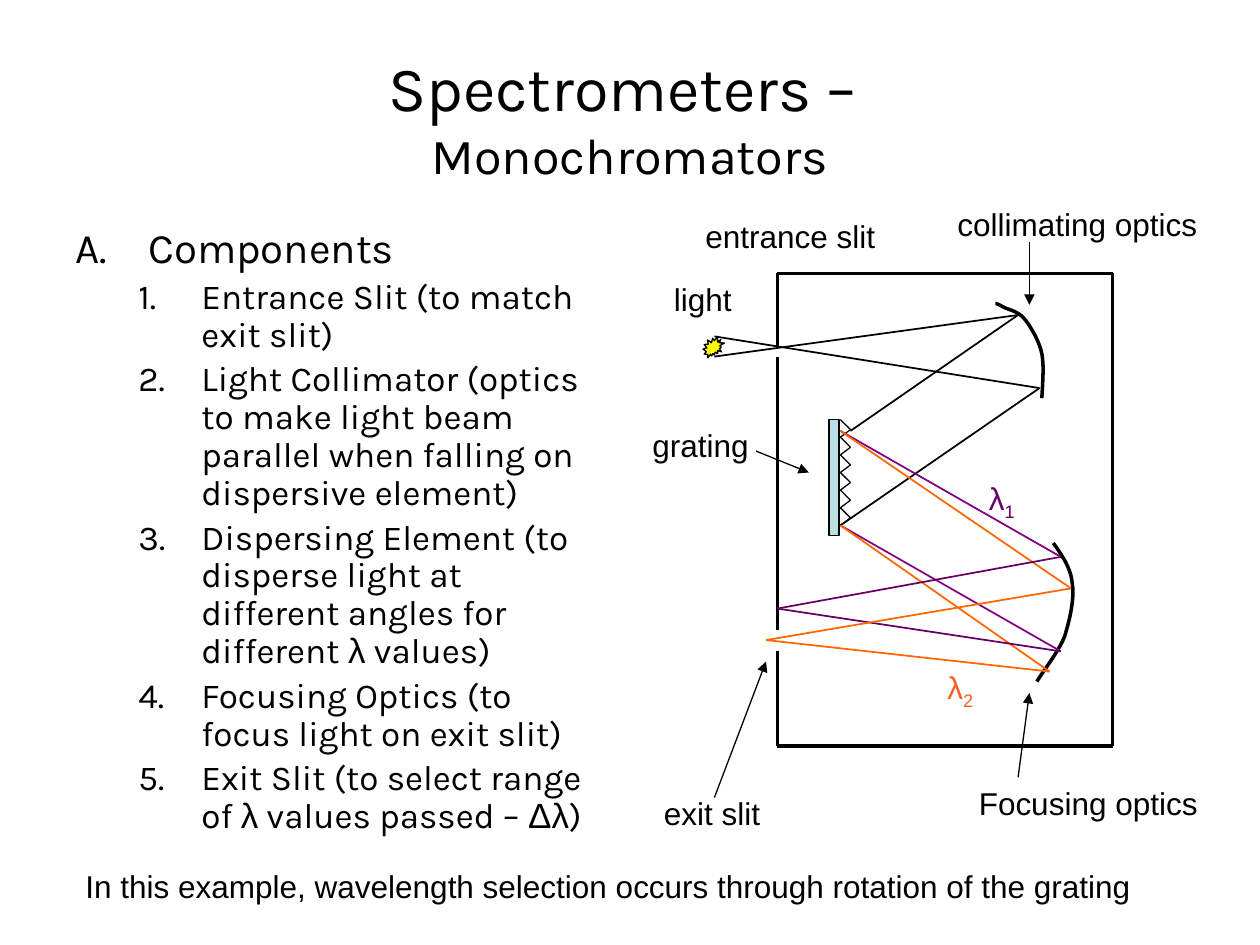
from itertools import groupby, pairwise

from pptx import Presentation
from pptx.dml.color import RGBColor
from pptx.enum.shapes import MSO_CONNECTOR, MSO_SHAPE
from pptx.enum.text import MSO_ANCHOR, PP_ALIGN
from pptx.oxml.ns import qn
from pptx.util import Inches, Pt

BLACK = "000000"
PURPLE = "800080"
DARK_PURPLE = "660066"
ORANGE = "FF6600"

COMPONENTS = [
    "Entrance Slit (to match exit slit)",
    "Light Collimator (optics to make light beam parallel when falling on dispersive element)",
    "Dispersing Element (to disperse light at different angles for different λ values)",
    "Focusing Optics (to focus light on exit slit)",
    "Exit Slit (to select range of λ values passed – Δλ)",
]

LABELS = [
    ("entrance slit", 5.5, 1.67, 1.58),
    ("light", 5.25, 2.17, 0.83),
    ("grating", 5.08, 3.33, 1.08),
    ("collimating optics", 7.5, 1.58, 2.25),
    ("Focusing optics", 7.67, 6.17, 2.08),
    ("exit slit", 5.17, 6.25, 1.42),
    ("In this example, wavelength selection occurs through rotation of the grating",
     0.58, 6.83, 8.92),
]

HOUSING = [
    [(6.17, 2.75), (6.17, 2.17), (8.83, 2.17), (8.83, 5.92), (6.17, 5.92), (6.17, 5.17)],
    [(6.17, 5), (6.17, 2.83)],
]

RAYS = [
    (BLACK, [(5.67, 2.67), (8.25, 3.08), (6.67, 4.17)]),
    (BLACK, [(5.67, 2.83), (8.08, 2.5), (6.75, 3.42)]),
    (PURPLE, [(6.67, 3.42), (8.42, 4.42)]),
    (PURPLE, [(6.67, 4.17), (8.42, 5.17)]),
    (ORANGE, [(6.67, 3.42), (8.5, 4.67)]),
    (ORANGE, [(6.67, 4.17), (8.33, 5.33)]),
    (DARK_PURPLE, [(8.42, 4.42), (6.17, 4.83), (8.42, 5.17)]),
    (ORANGE, [(8.5, 4.67), (6.08, 5.08), (8.33, 5.33)]),
]

POINTERS = [
    [(6, 3.58), (6.42, 3.75)],
    [(8.17, 1.92), (8.17, 2.42)],
    [(8.08, 6.17), (8.17, 5.5)],
    [(5.67, 6.33), (6.08, 5.25)],
]

COLLIMATING_MIRROR = [
    (7.9, 2.41), (7.92, 2.41), (7.93, 2.42), (7.97, 2.44), (8.01, 2.46),
    (8.08, 2.47), (8.13, 2.53), (8.18, 2.59), (8.25, 2.71), (8.27, 2.81),
    (8.29, 2.92), (8.27, 3.1), (8.27, 3.16),
]
FOCUSING_MIRROR = [
    (8.36, 4.31), (8.43, 4.41), (8.5, 4.51), (8.51, 4.63), (8.53, 4.75),
    (8.49, 4.92), (8.45, 5.05), (8.4, 5.18), (8.26, 5.35), (8.23, 5.41),
]


def rgb(color):
    return RGBColor.from_string(color)


def style_run(r, size, font="Arial", color=BLACK):
    r.font.size = Pt(size)
    r.font.name = font
    r.font.color.rgb = rgb(color)


def add_text(s, x, y, w, h):
    tf = s.shapes.add_textbox(Inches(x), Inches(y), Inches(w), Inches(h)).text_frame
    tf.word_wrap = True
    return tf


def add_title(s):
    tf = add_text(s, 0.5, 0.3, 9, 1.25)
    tf.vertical_anchor = MSO_ANCHOR.MIDDLE
    p = tf.paragraphs[0]
    p.text = "Spectrometers – \vMonochromators"
    p.alignment = PP_ALIGN.CENTER
    for r, size in zip(p.runs, (36, 28.8)):
        style_run(r, size, "Karla")


def add_outline_item(p, text, size, margin, hanging, numbered):
    p.line_spacing = 0.9
    p.space_before = Pt(size * 0.2)
    pPr = p._p.get_or_add_pPr()
    pPr.set("marL", str(Inches(margin)))
    pPr.set("indent", str(-Inches(hanging)))
    if numbered:
        font = pPr.makeelement(qn("a:buFont"), {"typeface": "Karla"})
        number = pPr.makeelement(qn("a:buAutoNum"), {"type": "arabicPeriod"})
        pPr.extend([font, number])
    for greek, chars in groupby(text, lambda c: c in "λΔ"):
        r = p.add_run()
        r.text = "".join(chars)
        style_run(r, size, "Arial" if greek else "Karla")


def add_outline(s):
    tf = add_text(s, 0.5, 1.75, 4.42, 5.25)
    add_outline_item(tf.paragraphs[0], "A.\tComponents", 24, 0.58, 0.58, False)
    for text in COMPONENTS:
        add_outline_item(tf.add_paragraph(), text, 20, 1, 0.5, True)


def add_label(s, text, x, y, w):
    tf = add_text(s, x, y, w, 0.4)
    tf.text = text
    style_run(tf.paragraphs[0].runs[0], 18)


def add_wavelength(s, index, x, y, color):
    p = add_text(s, x, y, 0.83, 0.4).paragraphs[0]
    for text in ("λ", index):
        r = p.add_run()
        r.text = text
        style_run(r, 18, color=color)
    r.font._element.set("baseline", "-25000")


def add_line(s, start, end, color, width, arrow=False):
    points = [Inches(v) for v in (*start, *end)]
    c = s.shapes.add_connector(MSO_CONNECTOR.STRAIGHT, *points)
    c.line.color.rgb = rgb(color)
    c.line.width = Pt(width)
    if arrow:
        ln = c.line._get_or_add_ln()
        ln.append(ln.makeelement(qn("a:tailEnd"), {"type": "triangle"}))
    spPr = c._element.spPr
    spPr.append(spPr.makeelement(qn("a:effectLst"), {}))


def add_polyline(s, points, color, width):
    for start, end in pairwise(points):
        add_line(s, start, end, color, width)


def add_filled_shape(s, kind, x, y, w, h, fill):
    sp = s.shapes.add_shape(kind, Inches(x), Inches(y), Inches(w), Inches(h))
    sp.shadow.inherit = False
    sp.fill.solid()
    sp.fill.fore_color.rgb = rgb(fill)
    sp.line.color.rgb = rgb(BLACK)
    sp.line.width = Pt(0.75)


def bezier(a, b, c, d, t):
    u = 1 - t
    return tuple(
        Inches(u**3 * i + 3 * u * u * t * j + 3 * u * t * t * k + t**3 * m)
        for i, j, k, m in zip(a, b, c, d)
    )


def add_mirror(s, controls, steps=10):
    points = [
        bezier(*controls[i:i + 4], n / steps)
        for i in range(0, len(controls) - 1, 3)
        for n in range(1, steps + 1)
    ]
    x, y = controls[0]
    builder = s.shapes.build_freeform(Inches(x), Inches(y))
    builder.add_line_segments(points, close=False)
    sp = builder.convert_to_shape()
    sp.shadow.inherit = False
    sp.fill.background()
    sp.line.color.rgb = rgb(BLACK)
    sp.line.width = Pt(2)


def add_grating(s):
    add_filled_shape(s, MSO_SHAPE.RECTANGLE, 6.58, 3.33, 0.08, 0.92, "BBE0E3")
    for tooth in range(6):
        top = 3.33 + 0.14 * tooth
        add_polyline(s, [(6.67, top), (6.75, top + 0.08), (6.67, top + 0.14)], BLACK, 0.75)


def main():
    prs = Presentation()
    prs.slide_width, prs.slide_height = Inches(10), Inches(7.5)
    s = prs.slides.add_slide(prs.slide_layouts[6])
    add_title(s)
    add_outline(s)
    add_filled_shape(s, MSO_SHAPE.EXPLOSION2, 5.58, 2.67, 0.17, 0.17, "FFFF00")
    for wall in HOUSING:
        add_polyline(s, wall, BLACK, 2)
    add_mirror(s, COLLIMATING_MIRROR)
    add_grating(s)
    add_mirror(s, FOCUSING_MIRROR)
    for color, points in RAYS:
        add_polyline(s, points, color, 1)
    for start, end in POINTERS:
        add_line(s, start, end, BLACK, 0.75, arrow=True)
    for label in LABELS:
        add_label(s, *label)
    add_wavelength(s, "1", 7.75, 3.75, DARK_PURPLE)
    add_wavelength(s, "2", 7.42, 5.25, "FE5F26")
    prs.save("out.pptx")


if __name__ == "__main__":
    main()
